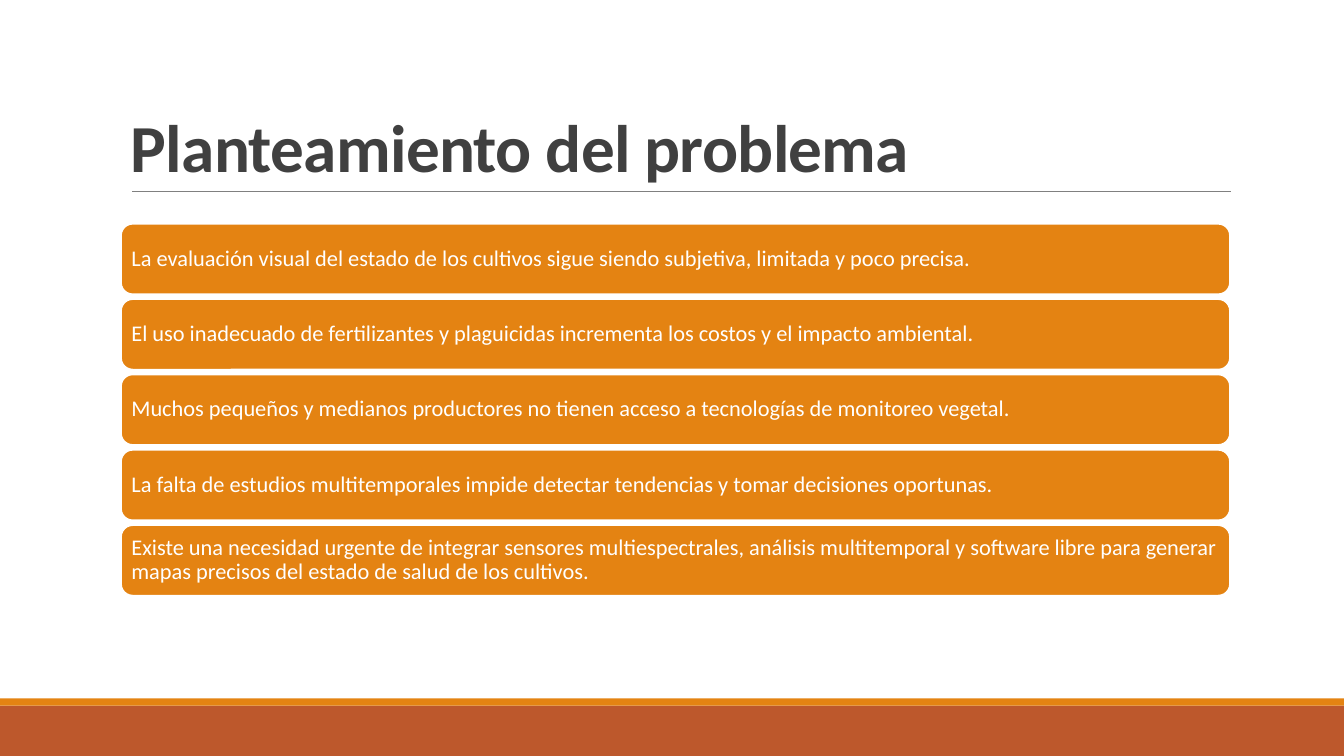
from lxml import etree
from pptx import Presentation
from pptx.dml.color import RGBColor
from pptx.enum.shapes import MSO_CONNECTOR as Connector, MSO_SHAPE as Shape
from pptx.enum.text import MSO_ANCHOR as Anchor, PP_ALIGN as Align
from pptx.oxml.ns import qn
from pptx.util import Inches, Pt

FONT = "Calibri"
ORANGE, RUST, WHITE = "E48312", "BD582C", "FFFFFF"
TITLE_COLOR, RULE_COLOR = "404040", "808080"

LEFT, WIDTH = 1.2, 11
FIRST_TOP, LAST_TOP, CARD_HEIGHT = 2.22, 5.21, 0.7

PROBLEMS = [
    "La evaluación visual del estado de los cultivos sigue siendo subjetiva, limitada y poco precisa.",
    "El uso inadecuado de fertilizantes y plaguicidas incrementa los costos y el impacto ambiental.",
    "Muchos pequeños y medianos productores no tienen acceso a tecnologías de monitoreo vegetal.",
    "La falta de estudios multitemporales impide detectar tendencias y tomar decisiones oportunas.",
    "Existe una necesidad urgente de integrar sensores multiespectrales, análisis multitemporal "
    "y software libre para generar mapas precisos del estado de salud de los cultivos.",
]


def rgb(value):
    return RGBColor.from_string(value)


def write_text(box, text, size, color, spacing, anchor, bold=False):
    """Fill a box with one left-aligned paragraph and return its run."""
    frame = box.text_frame
    frame.word_wrap = True
    frame.vertical_anchor = anchor
    para = frame.paragraphs[0]
    para.alignment = Align.LEFT
    para.line_spacing = spacing
    span = para.add_run()
    span.text = text
    span.font.name = FONT
    span.font.size = Pt(size)
    span.font.bold = bold
    span.font.color.rgb = rgb(color)
    return span


def add_block(page, kind, left, top, width, height, fill):
    block = page.shapes.add_shape(
        kind, Inches(left), Inches(top), Inches(width), Inches(height))
    block.shadow.inherit = False
    block.fill.solid()
    block.fill.fore_color.rgb = rgb(fill)
    block.line.fill.background()
    return block


def add_rule(page, left, right, top):
    rule = page.shapes.add_connector(
        Connector.STRAIGHT, Inches(left), Inches(top), Inches(right), Inches(top))
    rule.line.color.rgb = rgb(RULE_COLOR)
    rule.line.width = Pt(0.5)
    etree.SubElement(rule._element.spPr, qn("a:effectLst"))


def add_title(page, text):
    box = page.shapes.add_textbox(
        Inches(LEFT), Inches(0.31), Inches(WIDTH), Inches(1.59))
    span = write_text(box, text, 48, TITLE_COLOR, 0.85, Anchor.BOTTOM, bold=True)
    span.font._element.set("spc", "-50")  # tighter letter spacing


def add_card(page, top, text):
    card = add_block(page, Shape.ROUNDED_RECTANGLE, LEFT, top, WIDTH, CARD_HEIGHT, ORANGE)
    card.line.color.rgb = rgb(WHITE)
    card.line.width = Pt(1.25)
    frame = card.text_frame
    frame.margin_left = frame.margin_right = Inches(0.07)
    frame.margin_top = frame.margin_bottom = Inches(0.07)
    write_text(card, text, 16, WHITE, 0.9, Anchor.MIDDLE)


def main():
    deck = Presentation()
    deck.slide_width, deck.slide_height = Inches(13.33), Inches(7.5)
    page = deck.slides.add_slide(deck.slide_layouts[6])

    # Footer bands
    add_block(page, Shape.RECTANGLE, 0, 7, 13.33, 0.5, RUST)
    add_block(page, Shape.RECTANGLE, 0, 6.93, 13.33, 0.07, ORANGE)

    # Title and its rule
    add_rule(page, 1.31, 12.21, 1.9)
    add_title(page, "Planteamiento del problema")

    # Evenly spaced problem cards
    pitch = (LAST_TOP - FIRST_TOP) / (len(PROBLEMS) - 1)
    for index, problem in enumerate(PROBLEMS):
        add_card(page, FIRST_TOP + index * pitch, problem)

    deck.save("out.pptx")


if __name__ == "__main__":
    main()
